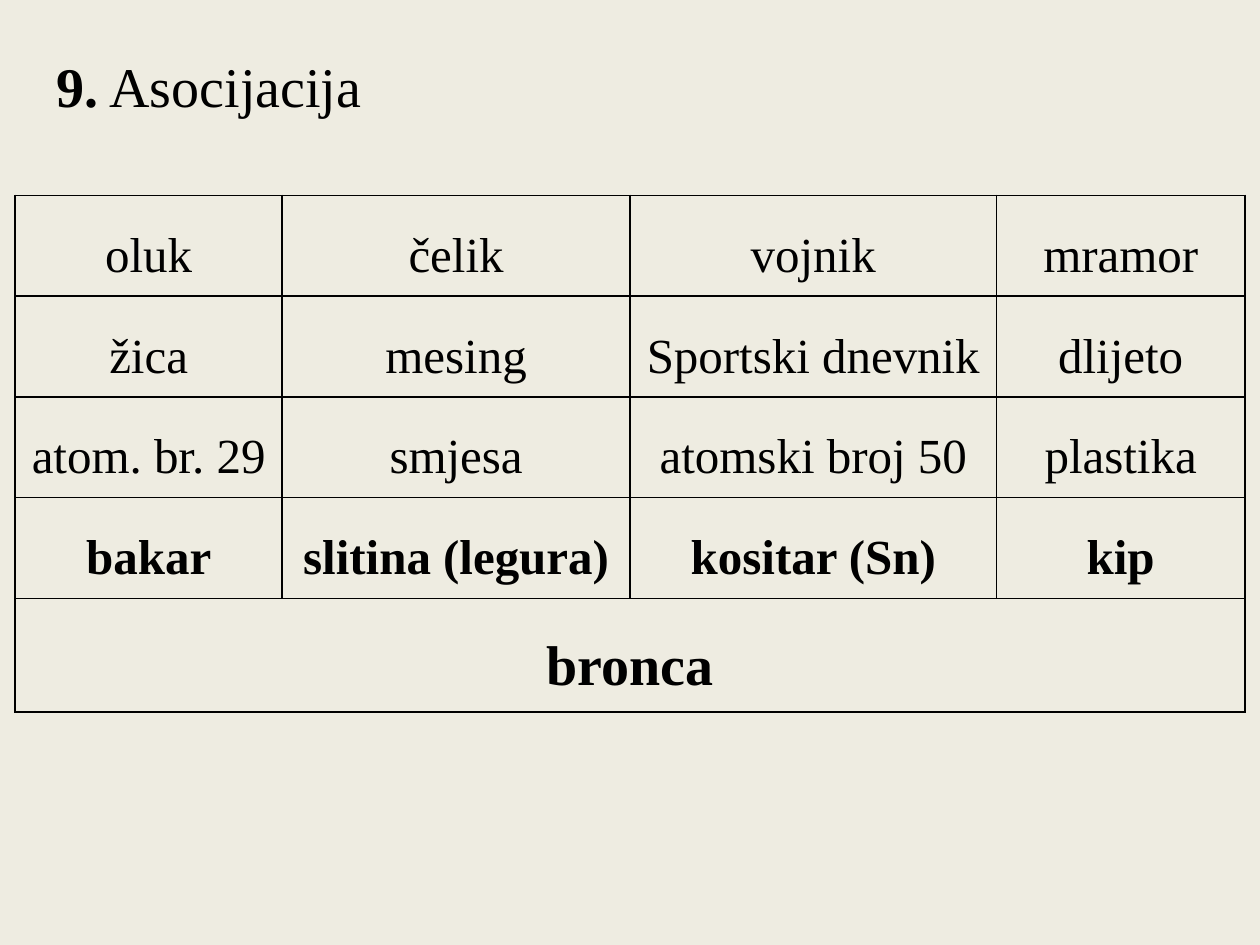
from lxml import etree
from pptx import Presentation
from pptx.dml.color import RGBColor
from pptx.enum.text import MSO_ANCHOR, PP_ALIGN
from pptx.oxml.ns import qn
from pptx.util import Inches, Pt

CENTER = PP_ALIGN.CENTER
TOP = MSO_ANCHOR.TOP


def rgb(value):
    return RGBColor.from_string(value)


class SlideBuilder:
    font = "Times New Roman"
    ink = "000000"
    paper = "EEECE1"
    body_size = 28
    large_size = 32

    def __init__(self, prs):
        self.s = prs.slides.add_slide(prs.slide_layouts[6])
        fill = self.s.background.fill
        fill.solid()
        fill.fore_color.rgb = rgb(self.paper)

    def style(self, p, size):
        p.font.name = self.font
        p.font.size = Pt(size)
        p.font.color.rgb = rgb(self.ink)

    def heading(self, x, y, w, h, number, title):
        tf = self.s.shapes.add_textbox(Inches(x), Inches(y), Inches(w), Inches(h)).text_frame
        tf.word_wrap = False
        p = tf.paragraphs[0]
        self.style(p, self.large_size)
        for text, bold in ((number, True), (f" {title}", False)):
            r = p.add_run()
            r.text = text
            r.font.bold = bold

    def borders(self, cell):
        tc_pr = cell._tc.get_or_add_tcPr()
        for i, side in enumerate(("lnL", "lnR", "lnT", "lnB")):
            ln = etree.Element(qn(f"a:{side}"), w=str(Pt(1)))
            fill = etree.SubElement(ln, qn("a:solidFill"))
            etree.SubElement(fill, qn("a:srgbClr"), val=self.ink)
            tc_pr.insert(i, ln)

    def cell(self, cell, text, size, bold):
        cell.fill.background()
        self.borders(cell)
        cell.vertical_anchor = TOP
        p = cell.text_frame.paragraphs[0]
        p.text = text
        p.alignment = CENTER
        p.line_spacing = 1.5
        self.style(p, size)
        p.font.bold = bold

    def association_table(self, x, y, widths, heights, clues, answers, solution):
        rows = clues + [answers, [solution] + [""] * (len(widths) - 1)]
        table = self.s.shapes.add_table(
            len(rows), len(widths), Inches(x), Inches(y),
            Inches(sum(widths)), Inches(sum(heights))).table
        table.first_row = table.horz_banding = False
        for column, width in zip(table.columns, widths):
            column.width = Inches(width)
        for row, height in zip(table.rows, heights):
            row.height = Inches(height)
        last = len(rows) - 1
        for i, texts in enumerate(rows):
            size = self.large_size if i == last else self.body_size
            for j, text in enumerate(texts):
                self.cell(table.cell(i, j), text, size, i >= len(clues))
        table.cell(last, 0).merge(table.cell(last, len(widths) - 1))


def main():
    prs = Presentation()
    prs.slide_width, prs.slide_height = Inches(10), Inches(7.5)
    slide = SlideBuilder(prs)

    # Association grid: clues, column answers, final solution
    slide.association_table(
        0.12, 1.55,
        widths=[2.12, 2.76, 2.91, 1.97],
        heights=[0.8] * 4 + [0.9],
        clues=[
            ["oluk", "čelik", "vojnik", "mramor"],
            ["žica", "mesing", "Sportski dnevnik", "dlijeto"],
            ["atom. br. 29", "smjesa", "atomski broj 50", "plastika"],
        ],
        answers=["bakar", "slitina (legura)", "kositar (Sn)", "kip"],
        solution="bronca",
    )

    # Heading
    slide.heading(0.35, 0.36, 2.65, 0.64, "9.", "Asocijacija")

    prs.save("out.pptx")


if __name__ == "__main__":
    main()
